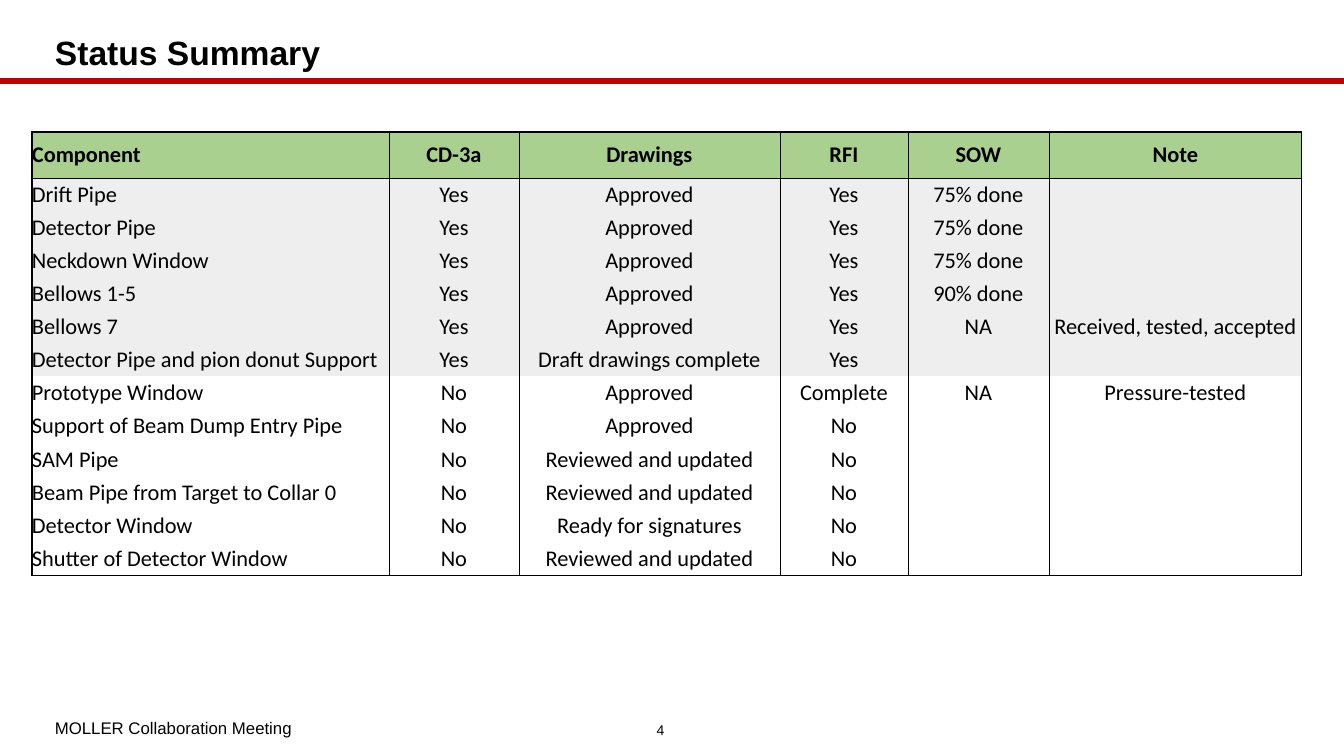
from lxml.etree import SubElement
from pptx import Presentation
from pptx.dml.color import RGBColor
from pptx.enum.shapes import MSO_CONNECTOR
from pptx.enum.text import MSO_ANCHOR, PP_ALIGN
from pptx.oxml.ns import qn
from pptx.util import Emu, Pt

BLACK = RGBColor(0x00, 0x00, 0x00)
RED = RGBColor(0xC0, 0x00, 0x00)
GREEN = RGBColor(0xA9, 0xD0, 0x8E)
GREY = RGBColor(0xEE, 0xEE, 0xEE)

THIN, THICK = Pt(0.5), Pt(1)

HEADER = ["Component", "CD-3a", "Drawings", "RFI", "SOW", "Note"]
CD3A_ROWS = [
    ["Drift Pipe", "Yes", "Approved", "Yes", "75% done", ""],
    ["Detector Pipe", "Yes", "Approved", "Yes", "75% done", ""],
    ["Neckdown Window", "Yes", "Approved", "Yes", "75% done", ""],
    ["Bellows 1-5", "Yes", "Approved", "Yes", "90% done", ""],
    ["Bellows 7", "Yes", "Approved", "Yes", "NA", "Received, tested, accepted"],
    ["Detector Pipe and pion donut Support", "Yes", "Draft drawings complete", "Yes", "", ""],
]
OTHER_ROWS = [
    ["Prototype Window", "No", "Approved", "Complete", "NA", "Pressure-tested"],
    ["Support of Beam Dump Entry Pipe", "No", "Approved", "No", "", ""],
    ["SAM Pipe", "No", "Reviewed and updated", "No", "", ""],
    ["Beam Pipe from Target to Collar 0", "No", "Reviewed and updated", "No", "", ""],
    ["Detector Window", "No", "Ready for signatures", "No", "", ""],
    ["Shutter of Detector Window", "No", "Reviewed and updated", "No", "", ""],
]
COLUMN_WIDTHS = [357, 130, 261, 128, 141, 253]
ROW_HEIGHTS = [46] + [33] * 7 + [35] + [33] * 4


def px(length):
    return Emu(round(length * 914400 / 100.8))


class StatusPage:
    """Holds the style and the current slide."""

    title_style = {"name": "Arial", "size": Pt(24), "bold": True}
    footer_style = {"name": "Arial", "size": Pt(12), "bold": False}
    number_style = {"name": "Arial", "size": Pt(10), "bold": False}
    header_style = {"name": "Calibri", "size": Pt(16), "bold": True}
    body_style = {"name": "Calibri", "size": Pt(16), "bold": False}

    def __init__(self, deck):
        self.page = deck.slides.add_slide(deck.slide_layouts[6])

    def fill_para(self, para, text, style, align):
        para.alignment = align
        if not text:
            # An empty cell keeps the body size, so its row does not grow
            SubElement(para._p, qn("a:endParaRPr"), sz=str(round(style["size"].pt * 100)))
            return
        span = para.add_run()
        span.text = text
        span.font.color.rgb = BLACK
        for name, value in style.items():
            setattr(span.font, name, value)

    def text(self, left, top, width, height, text, style, align=PP_ALIGN.LEFT):
        box = self.page.shapes.add_textbox(px(left), px(top), px(width), px(height))
        frame = box.text_frame
        frame.word_wrap = True
        frame.vertical_anchor = MSO_ANCHOR.MIDDLE
        self.fill_para(frame.paragraphs[0], text, style, align)

    def rule(self, left, right, y, color, weight):
        line = self.page.shapes.add_connector(
            MSO_CONNECTOR.STRAIGHT, px(left), px(y), px(right), px(y))
        line.line.color.rgb = color
        line.line.width = weight
        SubElement(line._element.spPr, qn("a:effectLst"))

    def borders(self, cell, widths):
        properties = cell._tc.get_or_add_tcPr()
        for side, width in zip("LRTB", widths):
            edge = SubElement(properties, qn(f"a:ln{side}"), w=str(int(width)))
            if width:
                fill = SubElement(edge, qn("a:solidFill"))
                SubElement(fill, qn("a:srgbClr"), val=str(BLACK))
            else:
                SubElement(edge, qn("a:noFill"))

    def table(self, left, top, widths, heights, rows, fills):
        frame = self.page.shapes.add_table(
            len(rows), len(widths), px(left), px(top), px(sum(widths)), px(sum(heights)))
        table = frame.table
        table.horz_banding = False
        table.first_row = False
        for column, width in zip(table.columns, widths):
            column.width = px(width)
        for row, height in zip(table.rows, heights):
            row.height = px(height)

        last_row, last_column = len(rows) - 1, len(widths) - 1
        cell_format = {"margin_left": 0, "margin_right": 0, "margin_top": 0,
                       "margin_bottom": 0, "vertical_anchor": MSO_ANCHOR.MIDDLE}
        for r, (values, color) in enumerate(zip(rows, fills)):
            style = self.body_style if r else self.header_style
            for c, value in enumerate(values):
                cell = table.cell(r, c)
                for name, setting in cell_format.items():
                    setattr(cell, name, setting)
                self.fill_para(cell.text_frame.paragraphs[0], value, style,
                               PP_ALIGN.CENTER if c else PP_ALIGN.LEFT)
                # Thick frame, thin column lines, one thin line under the header
                self.borders(cell, [
                    THIN if c else THICK,
                    THICK if c == last_column else THIN,
                    {0: THICK, 1: THIN}.get(r, 0),
                    {0: THIN, last_row: THICK}.get(r, 0),
                ])
                if color is None:
                    cell.fill.background()
                else:
                    cell.fill.solid()
                    cell.fill.fore_color.rgb = color


def main():
    deck = Presentation()
    deck.slide_width, deck.slide_height = px(1344), px(756)
    status = StatusPage(deck)

    # Title and rule
    status.rule(0, 1344, 81, RED, Pt(4.5))
    status.text(45, 26, 1244, 53, "Status Summary", status.title_style)

    # Component table
    rows = [HEADER] + CD3A_ROWS + OTHER_ROWS
    fills = [GREEN] + [GREY] * len(CD3A_ROWS) + [None] * len(OTHER_ROWS)
    status.table(32, 132, COLUMN_WIDTHS, ROW_HEIGHTS, rows, fills)

    # Footer
    status.text(45, 711, 576, 34, "MOLLER Collaboration Meeting", status.footer_style)
    status.text(621, 713, 79, 33, "4", status.number_style, PP_ALIGN.CENTER)

    deck.save("out.pptx")


if __name__ == "__main__":
    main()
